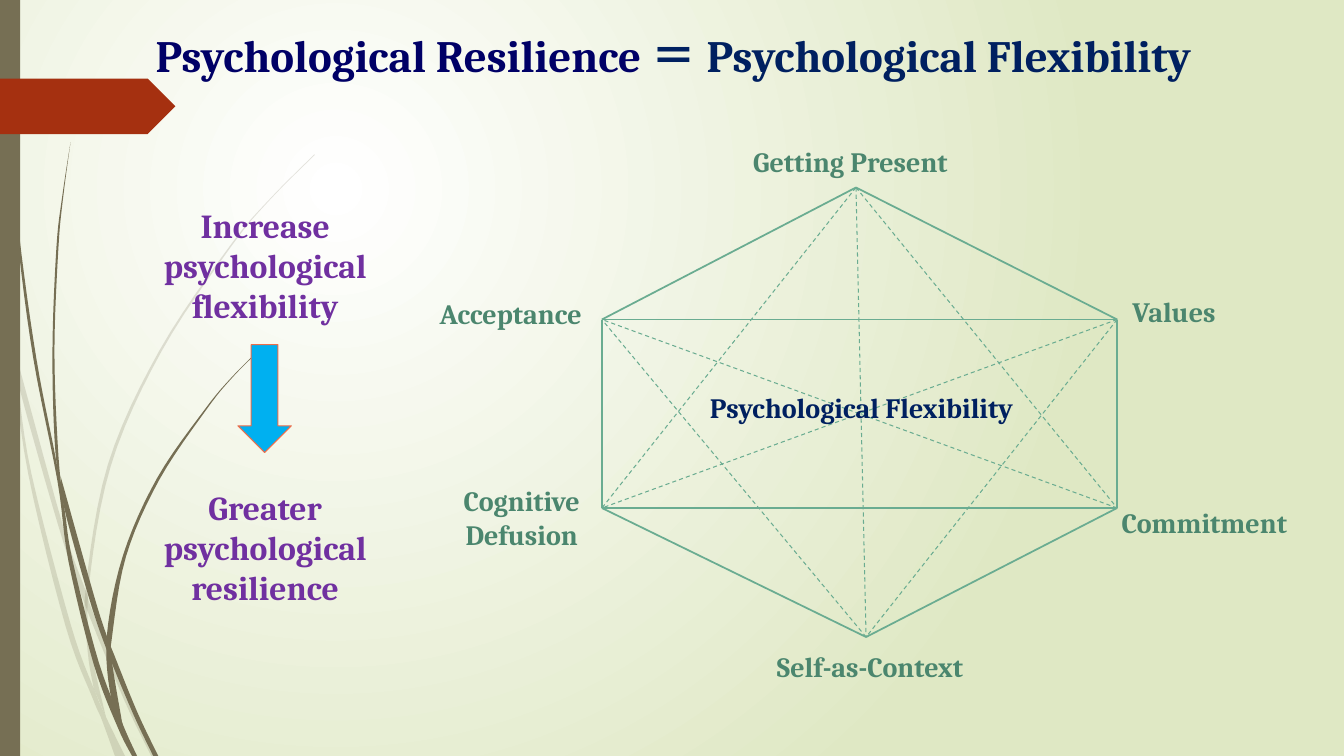
from dataclasses import dataclass
from itertools import combinations

from lxml import etree
from pptx import Presentation
from pptx.dml.color import RGBColor
from pptx.enum.dml import MSO_LINE
from pptx.enum.shapes import MSO_CONNECTOR, MSO_SHAPE
from pptx.enum.text import MSO_ANCHOR, MSO_AUTO_SIZE, PP_ALIGN
from pptx.oxml.ns import qn
from pptx.util import Inches, Pt

STRAIGHT = MSO_CONNECTOR.STRAIGHT
RECTANGLE, PENTAGON, DOWN_ARROW = MSO_SHAPE.RECTANGLE, MSO_SHAPE.PENTAGON, MSO_SHAPE.DOWN_ARROW
DASH, TOP, CENTER, NO_FIT = MSO_LINE.DASH, MSO_ANCHOR.TOP, PP_ALIGN.CENTER, MSO_AUTO_SIZE.NONE


@dataclass(frozen=True)
class Theme:
    font: str = "Cambria"
    title_size: int = 32
    body_size: int = 24
    label_size: int = 20
    glow: str = "FFFFFF"
    field: str = "DFE8C4"
    stem: str = "766F54"
    banner: str = "A53010"
    title: str = "000066"
    navy: str = "002060"
    purple: str = "7030A0"
    green: str = "4B866E"
    edge: str = "6AAC91"
    arrow: str = "00B0F0"
    arrow_line: str = "EE6E4B"


THEME = Theme()

TITLE = [("Psychological Resilience ", THEME.title), ("＝ Psychological Flexibility", THEME.navy)]
STEPS = ["Increase psychological flexibility", "Greater psychological resilience"]
STEP_GAP = 115

LABELS = [
    ("Getting Present", (7.29, 1.38, 2.29, 0.44), THEME.green),
    ("Values", (10.53, 2.87, 2.23, 0.44), THEME.green),
    ("Commitment", (10.83, 4.97, 2.23, 0.44), THEME.green),
    ("Self-as-Context", (7.48, 6.39, 2.3, 0.44), THEME.green),
    ("Cognitive Defusion", (4.06, 4.75, 2.23, 0.77), THEME.green),
    ("Acceptance", (3.95, 2.89, 2.23, 0.44), THEME.green),
    ("Psychological Flexibility", (6.45, 3.83, 4.19, 0.44), THEME.navy),
]

LEFT, RIGHT, UPPER, LOWER = 5.97, 11.08, 3.17, 5.04
HEXAGON = [(8.49, 1.86), (RIGHT, UPPER), (RIGHT, LOWER), (8.59, 6.32), (LEFT, LOWER), (LEFT, UPPER)]

FAINT_STEMS = [
    ([(0.14, 3.45), (0.62, 5.2), (0.85, 5.86), (0.92, 6.07), (1.27, 6.92), (1.55, 7.5)],
     [(0.14, 3.45), (0.17, 3.76), (0.58, 5.22), (0.84, 5.99), (1.23, 6.94), (1.5, 7.5)]),
    ([(0, 2.82), (0.09, 3.22), (0.17, 3.76), (0.31, 4.69), (0.7, 6.19), (0.93, 6.83),
      (1.05, 7.11), (1.24, 7.5)],
     [(0, 2.99), (0.1, 3.44), (0.28, 4.7), (0.65, 6.21), (0.92, 6.93), (1.01, 7.14), (1.14, 7.5)]),
    ([(3.12, 1.53), (2.68, 1.97), (2.28, 2.44), (1.58, 3.48), (1.07, 4.61), (0.85, 5.84),
      (0.87, 6.46), (0.93, 6.83)],
     [(3.12, 1.54), (2.68, 1.98), (2.29, 2.45), (1.6, 3.49), (1.1, 4.62), (0.88, 5.84),
      (0.91, 6.46), (1.05, 7.11)]),
]
DARK_STEMS = [
    ([(0.03, 0), (0.04, 0.48), (0.07, 1.1), (0.17, 2.33), (0.33, 3.55), (0.57, 4.77),
      (0.68, 5.57), (0.93, 6.59), (1.17, 7.22), (1.31, 7.5)],
     [(0.04, 0), (0.05, 0.48), (0.08, 1.09), (0.19, 2.32), (0.36, 3.55), (0.55, 4.53),
      (0.64, 5.05), (0.72, 5.56), (0.98, 6.57), (1.22, 7.19), (1.36, 7.5)]),
    ([(0.6, 4.72), (0.93, 5.9), (1.06, 6.31), (1.13, 6.49), (1.36, 7.06), (1.57, 7.5)],
     [(0.6, 4.72), (0.64, 5.05), (0.88, 5.92), (1.06, 6.45), (1.32, 7.08), (1.52, 7.5)]),
    ([(0.7, 1.41), (0.62, 1.93), (0.56, 2.45), (0.52, 3.49), (0.55, 4.49), (0.64, 5.05)],
     [(0.7, 1.41), (0.63, 1.93), (0.58, 2.45), (0.54, 3.49), (0.58, 4.53), (0.64, 5.05)]),
    ([(2.6, 3.44), (2.31, 3.73), (2.04, 4.05), (1.56, 4.74), (1.22, 5.51), (1.06, 6.31),
      (1.1, 6.91), (1.22, 7.19)],
     [(2.61, 3.44), (2.31, 3.74), (2.05, 4.06), (1.58, 4.76), (1.25, 5.52), (1.11, 6.33),
      (1.11, 6.56), (1.21, 7.16)]),
]


def rgb(color):
    return RGBColor.from_string(color)


def paint(sp, color, line=None, alpha=None):
    sp.shadow.inherit = False
    sp.fill.solid()
    sp.fill.fore_color.rgb = rgb(color)
    if alpha:
        clr = next(sp.element.iter(qn("a:srgbClr")))
        etree.SubElement(clr, qn("a:alpha"), val=str(alpha * 1000))
    if line:
        sp.line.color.rgb = rgb(line)
        sp.line.width = Pt(0.75)
    else:
        sp.line.fill.background()


def smooth_edge(points, steps=6):
    padded = [points[0], *points, points[-1]]
    curve = []
    for a, b, c, d in zip(padded, padded[1:], padded[2:], padded[3:]):
        for t in (i / steps for i in range(steps)):
            curve.append(tuple(
                0.5 * (2 * q + (r - p) * t + (2 * p - 5 * q + 4 * r - u) * t**2
                       + (3 * q - p - 3 * r + u) * t**3)
                for p, q, r, u in zip(a, b, c, d)))
    return curve + [points[-1]]


def add_stem(s, edges, alpha=None):
    near, far = map(smooth_edge, edges)
    outline = [(Inches(x), Inches(y)) for x, y in near + far[::-1]]
    builder = s.shapes.build_freeform(*outline[0])
    builder.add_line_segments(outline[1:], close=True)
    paint(builder.convert_to_shape(), THEME.stem, alpha=alpha)


def place(sp, box):
    sp.left, sp.top, sp.width, sp.height = map(Inches, box)


def format_text(tf, size, color):
    tf.word_wrap = True
    tf.auto_size = NO_FIT
    tf.vertical_anchor = TOP
    for p in tf.paragraphs:
        p.alignment = CENTER
        p.space_before = Pt(0)
        p.font.name, p.font.size, p.font.bold = THEME.font, Pt(size), True
        p.font.color.rgb = rgb(color)


def add_background(s):
    fill = s.background.fill
    fill.gradient()
    for stop, color in zip(fill.gradient_stops, (THEME.glow, THEME.field)):
        stop.color.rgb = rgb(color)
    grad = next(s.element.iter(qn("a:gradFill")))
    grad.remove(grad.find(qn("a:lin")))
    circle = etree.SubElement(grad, qn("a:path"), path="circle")
    etree.SubElement(circle, qn("a:fillToRect"), l="50000", t="50000", r="100000", b="100000")


def add_hexagon(s):
    for (i, a), (j, b) in combinations(enumerate(HEXAGON), 2):
        solid = j - i in (1, 5) or a[1] == b[1]
        line = s.shapes.add_connector(STRAIGHT, *map(Inches, a + b))
        line.line.color.rgb = rgb(THEME.edge)
        line.line.width = Pt(1.25 if solid else 0.75)
        if not solid:
            line.line.dash_style = DASH
        etree.SubElement(line.element.spPr, qn("a:effectLst"))


def main():
    prs = Presentation()
    prs.slide_width, prs.slide_height = Inches(13.33), Inches(7.5)
    s = prs.slides.add_slide(prs.slide_layouts[1])
    add_background(s)

    for edges in FAINT_STEMS:
        add_stem(s, edges, alpha=20)
    for edges in DARK_STEMS:
        add_stem(s, edges)
    paint(s.shapes.add_shape(RECTANGLE, 0, 0, Inches(0.2), prs.slide_height), THEME.stem)
    banner = s.shapes.add_shape(PENTAGON, 0, Inches(0.78), Inches(1.74), Inches(0.55))
    paint(banner, THEME.banner)

    title, body = s.shapes.title, s.placeholders[1]
    for sp in (body, title):
        sp.element.getparent().append(sp.element)

    place(body, (1.33, 1.98, 2.6, 4.14))
    tf = body.text_frame
    tf.text = "\n".join(STEPS)
    format_text(tf, THEME.body_size, THEME.purple)
    tf.paragraphs[1].space_before = Pt(STEP_GAP)
    for p in tf.paragraphs:
        pPr = p._p.get_or_add_pPr()
        pPr.set("marL", "0")
        pPr.set("indent", "0")
        pPr.find(qn("a:spcBef")).addnext(etree.Element(qn("a:buNone")))

    place(title, (0.13, 0.22, 13.1, 0.64))
    format_text(title.text_frame, THEME.title_size, THEME.title)
    for text, color in TITLE:
        r = title.text_frame.paragraphs[0].add_run()
        r.text = text
        r.font.color.rgb = rgb(color)

    arrow = s.shapes.add_shape(DOWN_ARROW, *map(Inches, (2.36, 3.42, 0.53, 1.07)))
    paint(arrow, THEME.arrow, line=THEME.arrow_line)

    add_hexagon(s)
    for text, box, color in LABELS:
        tf = s.shapes.add_textbox(*map(Inches, box)).text_frame
        tf.text = text
        format_text(tf, THEME.label_size, color)

    prs.save("out.pptx")


if __name__ == "__main__":
    main()
